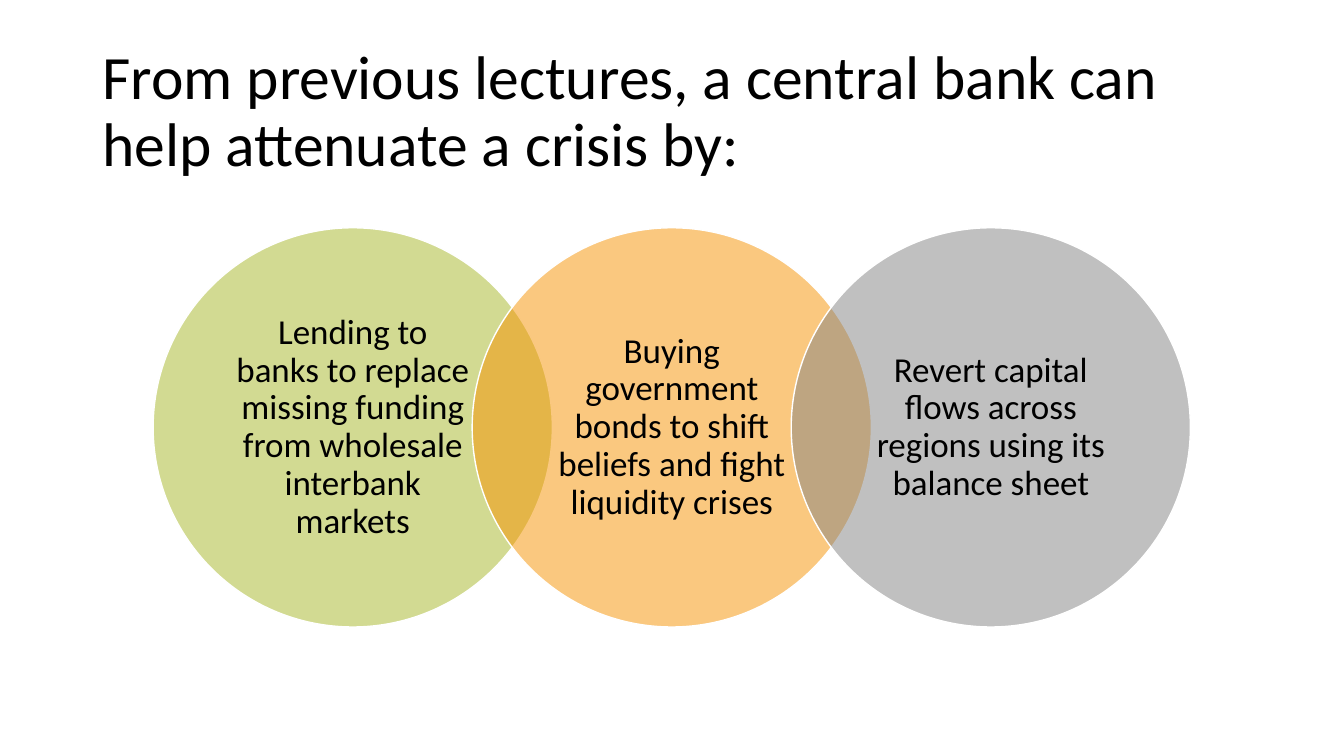
from lxml import etree
from pptx import Presentation
from pptx import util as u
from pptx.dml.color import RGBColor
from pptx.enum import shapes, text
from pptx.oxml import ns

BLACK = RGBColor(0x00, 0x00, 0x00)
WHITE = RGBColor(0xFF, 0xFF, 0xFF)
GREEN = RGBColor(0xA6, 0xB7, 0x27)
ORANGE = RGBColor(0xF6, 0x92, 0x00)
GREY = RGBColor(0x83, 0x83, 0x83)

HEADING = "From previous lectures, a central bank can help attenuate a crisis by:"
MEASURES = [
    ("Lending to banks to replace missing funding from wholesale interbank markets", GREEN),
    ("Buying government bonds to shift beliefs and fight liquidity crises", ORANGE),
    ("Revert capital flows across regions using its balance sheet", GREY),
]
FIRST_LEFT, CIRCLE_TOP, DIAMETER, PITCH = 3.86, 5.74, 10.06, 8.04


def write(frame, wording, size, align, font="Calibri", color=BLACK, inset=(0.25, 0.13)):
    """Fill a text frame with one formatted, vertically centred paragraph."""
    frame.word_wrap = True
    frame.auto_size = text.MSO_AUTO_SIZE.NONE
    frame.vertical_anchor = text.MSO_ANCHOR.MIDDLE
    frame.margin_left = frame.margin_right = u.Cm(inset[0])
    frame.margin_top = frame.margin_bottom = u.Cm(inset[1])
    paragraph = frame.paragraphs[0]
    paragraph.alignment = align
    paragraph.line_spacing = 0.9
    run = paragraph.add_run()
    run.text = wording
    run.font.size = u.Pt(size)
    run.font.name = font
    run.font.color.rgb = color


class VennSlide:
    """Hold the current slide and the style of its overlapping circles."""

    opacity = 50
    outline = WHITE
    title_size = 44
    circle_size = 25

    def __init__(self, deck):
        """Add a title-only slide to the deck."""
        self.slide = deck.slides.add_slide(deck.slide_layouts[5])

    def title(self, wording, left, top, width, height):
        """Place and format the title placeholder."""
        heading = self.slide.shapes.title
        heading.left, heading.top = u.Cm(left), u.Cm(top)
        heading.width, heading.height = u.Cm(width), u.Cm(height)
        write(heading.text_frame, wording, self.title_size, text.PP_ALIGN.LEFT)

    def circle(self, wording, color, left, top, diameter):
        """Draw a translucent circle with centred wording."""
        circle = self.slide.shapes.add_shape(
            shapes.MSO_SHAPE.OVAL, u.Cm(left), u.Cm(top), u.Cm(diameter), u.Cm(diameter))
        circle.shadow.inherit = False
        circle.fill.solid()
        circle.fill.fore_color.rgb = color
        tint = circle.fill._xPr.find(ns.qn("a:solidFill"))[0]
        etree.SubElement(tint, ns.qn("a:alpha"), val=str(self.opacity * 1000))
        circle.line.color.rgb = self.outline
        circle.line.width = u.Pt(1)
        write(circle.text_frame, wording, self.circle_size, text.PP_ALIGN.CENTER,
              inset=(0.56, 0.08))


def main():
    """Build and save the presentation."""
    deck = Presentation()
    deck.slide_width, deck.slide_height = u.Cm(33.87), u.Cm(19.05)
    venn = VennSlide(deck)
    venn.title(HEADING, 2.33, 1.01, 29.21, 3.68)
    for position, (measure, color) in enumerate(MEASURES):
        venn.circle(measure, color, FIRST_LEFT + position * PITCH, CIRCLE_TOP, DIAMETER)
    deck.save("out.pptx")


if __name__ == "__main__":
    main()
